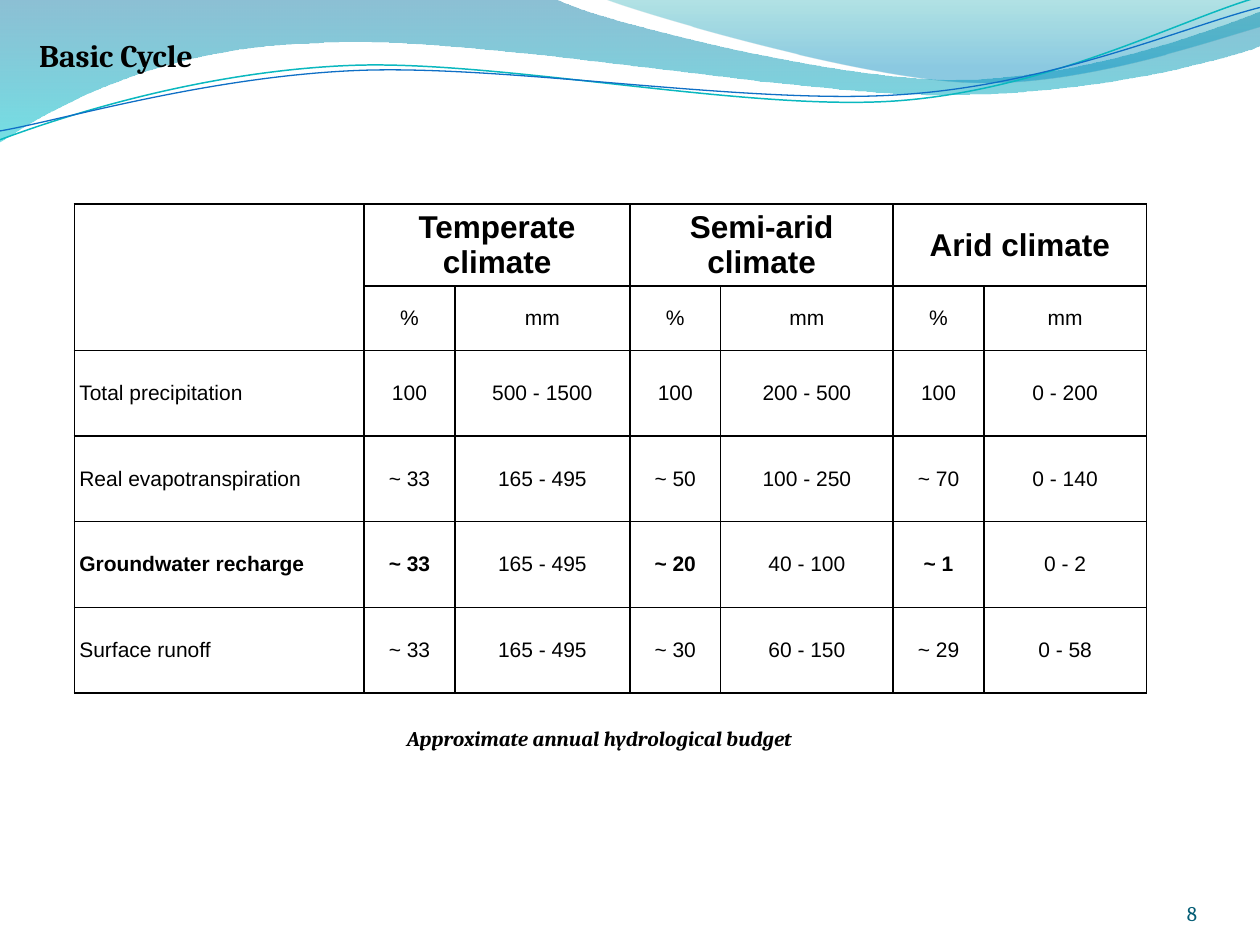
from math import cos, radians, sin

from lxml import etree
from pptx import Presentation
from pptx.dml.color import RGBColor
from pptx.enum.text import MSO_ANCHOR, MSO_AUTO_SIZE, PP_ALIGN
from pptx.oxml.ns import qn
from pptx.util import Inches, Pt

LEFT, CENTER, RIGHT = PP_ALIGN.LEFT, PP_ALIGN.CENTER, PP_ALIGN.RIGHT
MIDDLE, BOTTOM = MSO_ANCHOR.MIDDLE, MSO_ANCHOR.BOTTOM
NO_AUTOFIT = MSO_AUTO_SIZE.NONE

BLACK = RGBColor(0x00, 0x00, 0x00)
PAGE_TEAL = RGBColor(0x04, 0x5D, 0x75)
DEEP_BLUE = RGBColor(0x00, 0x74, 0xA1)
CYAN = RGBColor(0x00, 0xC6, 0xCF)
SEA_GREEN = RGBColor(0x00, 0xA1, 0xA9)
SKY_BLUE = RGBColor(0x00, 0x8B, 0xBF)
LINE_TEAL = RGBColor(0x0A, 0xB8, 0xBF)
LINE_BLUE = RGBColor(0x0F, 0x6F, 0xC6)

INSET = 0.04
CURVE_TILT = 2.7

LARGE_WAVE = [
    (0, 0), (4.4, -0.01), (4.76, 0.17, 6.64, 0.63, 7.58, 0.63),
    (8.53, 0.63, 9.58, 0.26, 10, 0.09), (10.01, 0.36),
    (9.83, 0.44, 8.7, 0.76, 7.46, 0.75), (6.22, 0.75, 3.82, 0.28, 2.57, 0.34),
    (1.29, 0.36, 0.46, 0.83, -0.01, 1.13), (0, 0),
]
SMALL_WAVE = [
    (4.79, -0.01), (5.09, 0.11, 6.82, 0.62, 7.69, 0.65),
    (8.56, 0.69, 9.61, 0.32, 10, 0.21), (10, 0), (4.79, -0.01),
]
TEAL_CURVE = [
    (0, 1.11), (0.48, 0.93, 1.58, 0.57, 2.77, 0.52),
    (3.95, 0.47, 5.93, 0.89, 7.13, 0.8), (8.33, 0.71, 9.38, 0.15, 9.98, -0.02),
]
BLUE_CURVE = [
    (0, 1.04), (0.47, 0.96, 1.64, 0.61, 2.83, 0.56),
    (4.03, 0.51, 5.97, 0.84, 7.17, 0.75), (8.36, 0.67, 9.41, 0.21, 10, 0.06),
]

CLIMATES = ["Temperate climate", "Semi-arid climate", "Arid climate"]
BUDGET = [
    ["Total precipitation", "100", "500 - 1500", "100", "200 - 500", "100", "0 - 200"],
    ["Real evapotranspiration", "~ 33", "165 - 495", "~ 50", "100 - 250", "~ 70", "0 - 140"],
    ["Groundwater recharge", "~ 33", "165 - 495", "~ 20", "40 - 100", "~ 1", "0 - 2"],
    ["Surface runoff", "~ 33", "165 - 495", "~ 30", "60 - 150", "~ 29", "0 - 58"],
]
KEY_ROW = "Groundwater recharge"
COLUMN_WIDTHS = [2.3, 0.72, 1.39, 0.72, 1.37, 0.72, 1.29]
ROW_HEIGHTS = [0.65, 0.51] + [0.68] * len(BUDGET)


def point_pairs(segment):
    """Split a flat segment into (x, y) pairs."""
    return list(zip(segment[::2], segment[1::2]))


def add_path(slide, segments, closed):
    """Add a freeform whose six-number segments are Bezier curves."""
    anchors = [(Inches(segment[-2]), Inches(segment[-1])) for segment in segments]
    builder = slide.shapes.build_freeform(*anchors[0])
    builder.add_line_segments(anchors[1:], close=closed)
    shape = builder.convert_to_shape()
    shape.shadow.inherit = False
    lines = list(shape.element.iter(qn("a:lnTo")))
    for line, segment in zip(lines, segments[1:]):
        if len(segment) == 6:
            line.tag = qn("a:cubicBezTo")
            curve = etree.Element(qn("a:cubicBezTo"))
            for x, y in point_pairs(segment):
                etree.SubElement(
                    curve, qn("a:pt"), x=str(Inches(x) - shape.left), y=str(Inches(y) - shape.top)
                )
            line.getparent().replace(line, curve)
    return shape


def add_wave(slide, segments, stops):
    """Add a closed wave with a translucent top-to-bottom gradient."""
    shape = add_path(slide, segments, True)
    shape.line.fill.background()
    shape.fill.gradient()
    shape.fill.gradient_angle = 270
    for stop, (position, color, _) in zip(shape.fill.gradient_stops, stops):
        stop.position = position
        stop.color.rgb = color
    colors = shape.element.spPr.iter(qn("a:srgbClr"))
    for color_element, (_, _, opacity) in zip(colors, stops):
        etree.SubElement(color_element, qn("a:alpha"), val=str(opacity * 1000))


def level(segments):
    """Turn segments clockwise by the tilt about the middle of their ends."""
    center_x = (segments[0][0] + segments[-1][-2]) / 2
    center_y = (segments[0][1] + segments[-1][-1]) / 2
    cosine, sine = cos(radians(CURVE_TILT)), sin(radians(CURVE_TILT))
    turned = []
    for segment in segments:
        values = []
        for x, y in point_pairs(segment):
            across, down = x - center_x, y - center_y
            values += [center_x + across * cosine - down * sine, center_y + across * sine + down * cosine]
        turned.append(tuple(values))
    return turned


def add_curve(slide, segments, color, width):
    """Add an open, unfilled curve as a tilted shape."""
    shape = add_path(slide, level(segments), False)
    shape.rotation = 360 - CURVE_TILT
    shape.fill.background()
    shape.line.color.rgb = color
    shape.line.width = Pt(width)


def format_paragraph(paragraph, text, size, name, color=BLACK, bold=False, italic=False, align=LEFT):
    """Write and style a one-line paragraph."""
    paragraph.text = text
    paragraph.alignment = align
    font = paragraph.font
    font.size, font.name, font.bold, font.italic = Pt(size), name, bold, italic
    font.color.rgb = color


def fill_text(shape, text, size, anchor=MIDDLE, inset=INSET, **style):
    """Set the text and frame of a title or text box."""
    frame = shape.text_frame
    frame.word_wrap = True
    frame.auto_size = NO_AUTOFIT
    frame.vertical_anchor = anchor
    frame.margin_left = frame.margin_right = Inches(inset)
    frame.margin_top = frame.margin_bottom = Inches(inset)
    format_paragraph(frame.paragraphs[0], text, size, "Cambria", **style)


def add_title(slide, text):
    """Place the title placeholder in front of the waves."""
    title = slide.shapes.title
    title.left, title.top, title.width, title.height = map(Inches, (0.27, 0.2, 9.45, 0.47))
    title.element.getparent().append(title.element)
    fill_text(title, text, 18, bold=True)


def add_text(slide, box, text, **style):
    """Add a small text box."""
    shape = slide.shapes.add_textbox(*map(Inches, box))
    fill_text(shape, text, 12, **style)


def format_cell(cell):
    """Give a cell black borders, narrow margins and no fill."""
    properties = cell._tc.get_or_add_tcPr()
    for side in ("a:lnL", "a:lnR", "a:lnT", "a:lnB"):
        border = etree.SubElement(properties, qn(side), w=str(Pt(1)))
        solid = etree.SubElement(border, qn("a:solidFill"))
        etree.SubElement(solid, qn("a:srgbClr"), val=str(BLACK))
    cell.fill.background()
    cell.vertical_anchor = MIDDLE
    cell.margin_left = cell.margin_right = Inches(INSET)
    cell.margin_top = cell.margin_bottom = Inches(INSET)


def add_budget_table(slide):
    """Add the water budget table with paired columns per climate."""
    size = (sum(COLUMN_WIDTHS), sum(ROW_HEIGHTS))
    table = slide.shapes.add_table(
        len(ROW_HEIGHTS), len(COLUMN_WIDTHS), *map(Inches, (0.59, 1.62, *size))
    ).table
    table.first_row = table.horz_banding = False
    for column, width in zip(table.columns, COLUMN_WIDTHS):
        column.width = Inches(width)
    for row, height in zip(table.rows, ROW_HEIGHTS):
        row.height = Inches(height)
    for cell in table.iter_cells():
        format_cell(cell)
    table.cell(0, 0).merge(table.cell(1, 0))
    for column, climate in zip(range(1, len(COLUMN_WIDTHS), 2), CLIMATES):
        header = table.cell(0, column)
        header.merge(table.cell(0, column + 1))
        format_paragraph(header.text_frame.paragraphs[0], climate, 18, "Arial", bold=True, align=CENTER)
    units = [""] + ["%", "mm"] * len(CLIMATES)
    for row_index, values in enumerate([units] + BUDGET, start=1):
        for column, text in enumerate(values):
            if text:
                paragraph = table.cell(row_index, column).text_frame.paragraphs[0]
                bold = values[0] == KEY_ROW and (column == 0 or column % 2 == 1)
                align = CENTER if column else LEFT
                format_paragraph(paragraph, text, 12, "Arial", bold=bold, align=align)


def main():
    """Build and save the slide."""
    presentation = Presentation()
    presentation.slide_width, presentation.slide_height = Inches(10), Inches(7.5)
    slide = presentation.slides.add_slide(presentation.slide_layouts[5])
    add_wave(slide, LARGE_WAVE, [(0, DEEP_BLUE, 45), (1, CYAN, 55)])
    add_wave(slide, SMALL_WAVE, [(0, SEA_GREEN, 30), (0.8, SKY_BLUE, 45)])
    add_curve(slide, TEAL_CURVE, LINE_TEAL, 0.85)
    add_curve(slide, BLUE_CURVE, LINE_BLUE, 0.75)
    add_text(slide, (8.67, 6.95, 0.83, 0.4), "8", anchor=BOTTOM, inset=0, color=PAGE_TEAL, align=RIGHT)
    add_title(slide, "Basic Cycle")
    add_budget_table(slide)
    add_text(slide, (3.19, 5.72, 3.33, 0.28), "Approximate annual hydrological budget", bold=True, italic=True)
    presentation.save("out.pptx")


if __name__ == "__main__":
    main()
